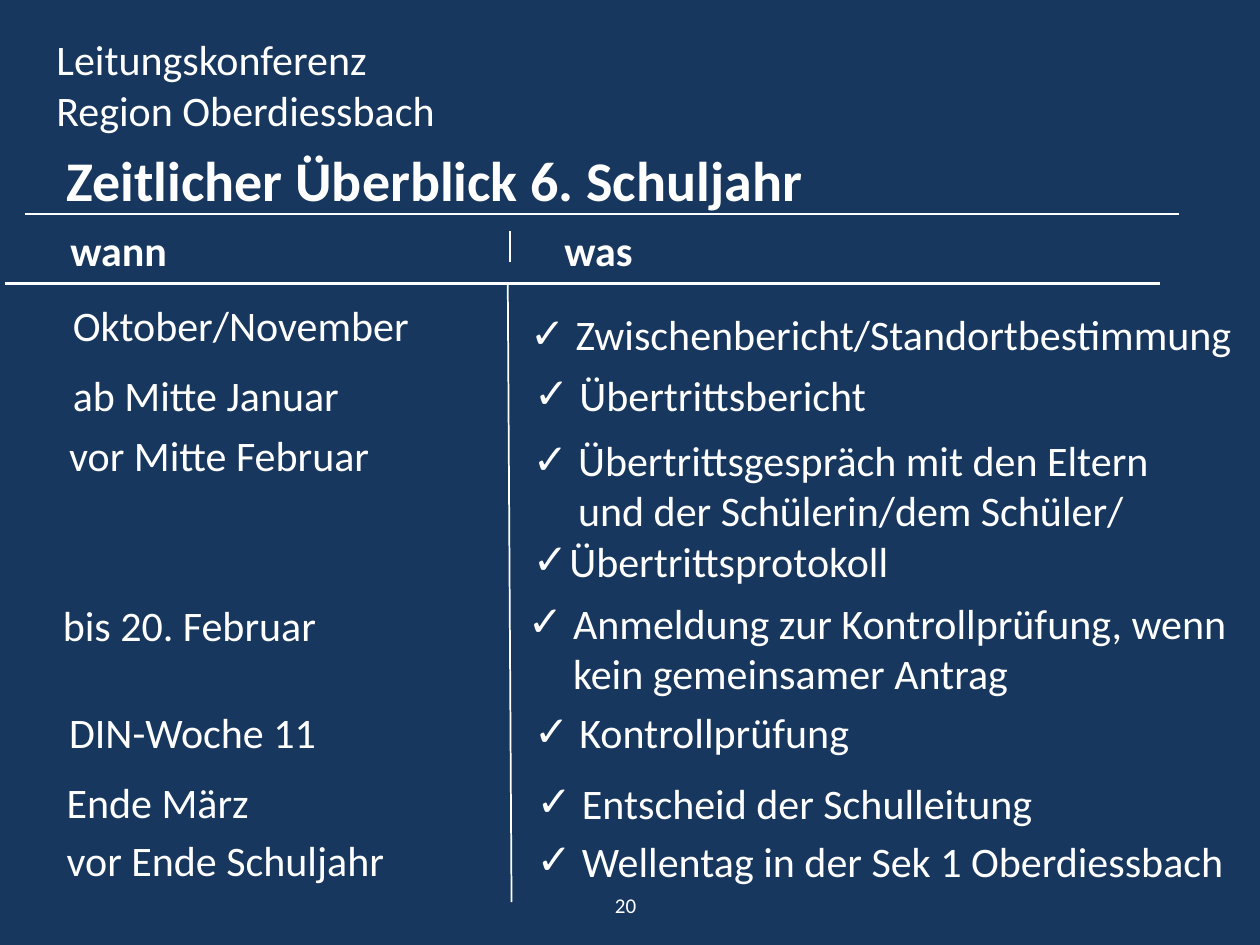
from dataclasses import dataclass

from lxml import etree
from pptx import Presentation
from pptx import util as u
from pptx.dml.color import RGBColor
from pptx.enum import shapes, text
from pptx.oxml.ns import qn

# Grid of 100 columns by 75 rows on a slide of 10 by 7.5 inches
CELL = u.Inches(0.1)
COLUMNS, ROWS = 100, 75
NAVY, WHITE = "17375E", "FFFFFF"
FONT = "Calibri"
LINE_ROWS = 4.05
HANG = 3.6


@dataclass
class Area:
    column: float
    row: float
    columns: float
    rows: float = 5.05


@dataclass
class Step:
    when: str
    when_area: Area
    tasks: list[str]
    task_area: Area
    hangs: tuple[float, ...] = (HANG,)


@dataclass
class Rule:
    start: tuple[float, float]
    end: tuple[float, float]
    weight: float = 1.25


STEPS = [
    Step("Oktober/November", Area(4.8, 23.3, 29),
         ["Zwischenbericht/Standortbestimmung"], Area(41.1, 24, 58.1)),
    Step("ab Mitte Januar", Area(4.8, 28.8, 23.4),
         ["Übertrittsbericht"], Area(41.4, 28.8, 29.2)),
    Step("vor Mitte Februar", Area(4.5, 33.6, 26.1),
         ["Übertrittsgespräch mit den Eltern\vund der Schülerin/dem Schüler/",
          "Übertrittsprotokoll"],
         Area(41.3, 34, 51.2, 1 + 3 * LINE_ROWS), (HANG, 2.9)),
    Step("bis 20. Februar", Area(4, 47.1, 22.3),
         ["Anmeldung zur Kontrollprüfung, wenn\vkein gemeinsamer Antrag"],
         Area(40.9, 46.9, 57.8, 1 + 2 * LINE_ROWS)),
    Step("DIN-Woche 11", Area(4.5, 55.6, 21.8),
         ["Kontrollprüfung"], Area(41.4, 55.6, 27)),
    Step("Ende März", Area(4.3, 61.1, 16.6),
         ["Entscheid der Schulleitung"], Area(41.6, 61.2, 41.5)),
    Step("vor Ende Schuljahr", Area(4.3, 65.7, 27.5),
         ["Wellentag in der Sek 1 Oberdiessbach"], Area(41.6, 65.8, 56.8)),
]

RULES = [
    Rule((2, 17), (93.6, 17)),
    Rule((40.5, 18.3), (40.5, 20.8)),
    Rule((0.4, 22.5), (92.1, 22.5)),
    Rule((40.3, 22.5), (40.6, 71.6), 1),
]


def cells(count: float) -> int:
    return round(count * CELL)


def colour(value: str) -> RGBColor:
    return RGBColor.from_string(value)


def add_check_bullet(para, hang: float) -> None:
    properties = para._p.get_or_add_pPr()
    properties.set("marL", str(cells(hang)))
    properties.set("indent", str(-cells(hang)))
    etree.SubElement(properties, qn("a:buFont"), typeface=FONT)
    etree.SubElement(properties, qn("a:buChar"), char="✓")


def add_text(page, area: Area, lines: list[str], *, size: float = 24, bold: bool = False,
             hangs: tuple[float, ...] = (), centred: bool = False):
    """Add one paragraph per line; each entry in hangs gives its line a check mark."""
    box = page.shapes.add_textbox(*map(cells, (area.column, area.row, area.columns, area.rows)))
    frame = box.text_frame
    frame.word_wrap = centred
    if centred:
        frame.vertical_anchor = text.MSO_ANCHOR.MIDDLE
    else:
        frame.auto_size = text.MSO_AUTO_SIZE.SHAPE_TO_FIT_TEXT
    for index, line in enumerate(lines):
        para = frame.add_paragraph() if index else frame.paragraphs[0]
        if hangs:
            add_check_bullet(para, hangs[index])
        para.text = line
        para.alignment = text.PP_ALIGN.CENTER if centred else text.PP_ALIGN.LEFT
        for span in para.runs:
            span.font.name = FONT
            span.font.size = u.Pt(size)
            span.font.bold = bold
            span.font.color.rgb = colour(WHITE)
    return box


def add_rule(page, rule: Rule) -> None:
    line = page.shapes.add_connector(
        shapes.MSO_CONNECTOR.STRAIGHT, *map(cells, rule.start + rule.end))
    line.line.color.rgb = colour(WHITE)
    line.line.width = u.Pt(rule.weight)
    etree.SubElement(line._element.spPr, qn("a:effectLst"))


def add_step(page, step: Step) -> None:
    add_text(page, step.when_area, [step.when])
    add_text(page, step.task_area, step.tasks, hangs=step.hangs)


def main() -> None:
    deck = Presentation()
    deck.slide_width, deck.slide_height = cells(COLUMNS), cells(ROWS)
    page = deck.slides.add_slide(deck.slide_layouts[6])
    page.background.fill.solid()
    page.background.fill.fore_color.rgb = colour(NAVY)

    add_text(page, Area(3.5, 2.2, 33.6, 9.1), ["Leitungskonferenz", "Region Oberdiessbach"])
    add_text(page, Area(4.3, 11.1, 61, 6.4), ["Zeitlicher Überblick 6. Schuljahr"],
             size=32, bold=True)
    add_text(page, Area(4.6, 17.3, 9.8), ["wann"], bold=True)
    add_text(page, Area(43.8, 17.3, 7.5), ["was"], bold=True)
    for rule in RULES:
        add_rule(page, rule)
    for step in STEPS:
        add_step(page, step)
    add_text(page, Area(33.8, 69.8, 31.7, 4), ["20"], size=12, centred=True)

    deck.save("out.pptx")


if __name__ == "__main__":
    main()
